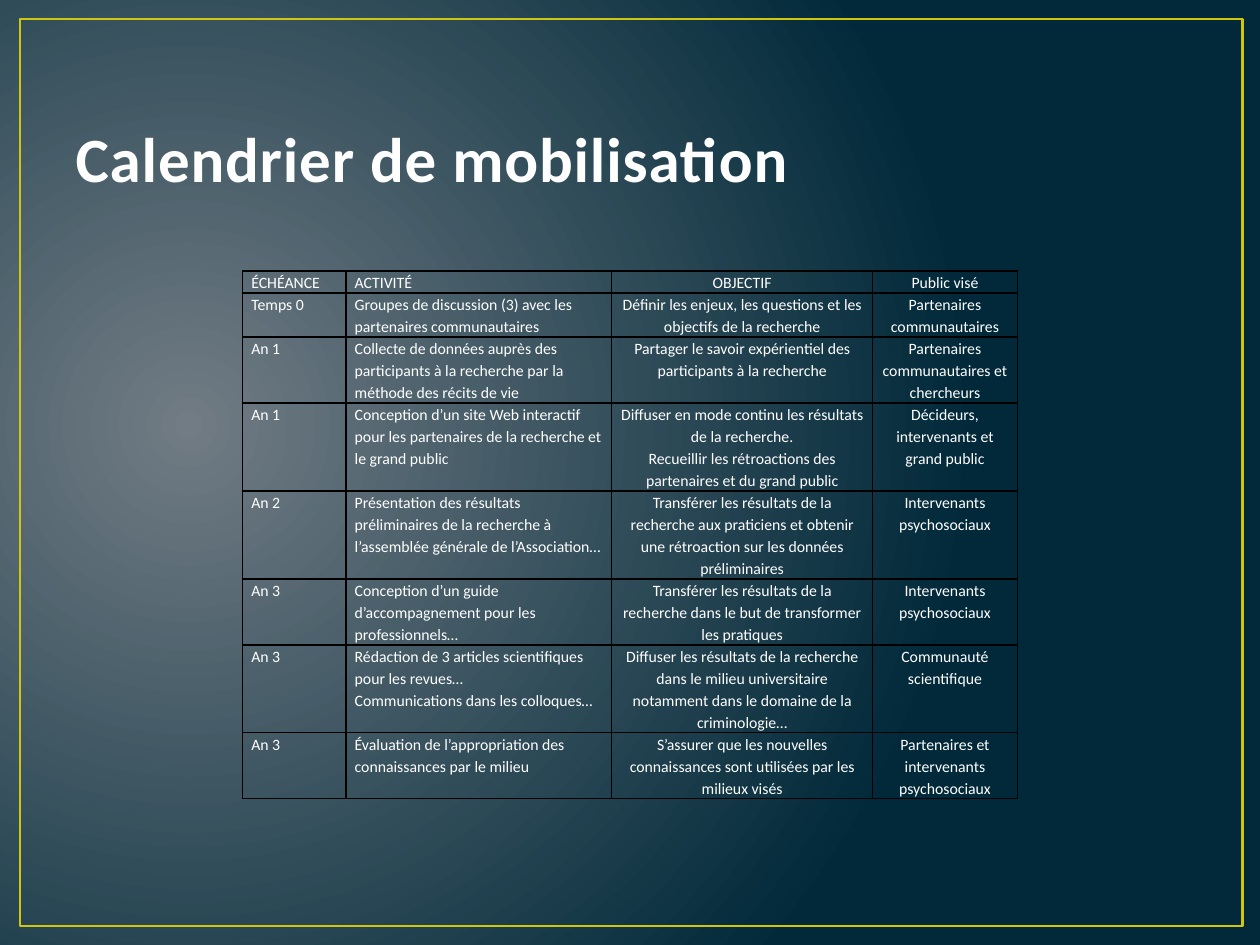
import pptx
import pptx.dml.color
import pptx.enum.text
import pptx.oxml
import pptx.oxml.ns
import pptx.util
from lxml import etree

Pt = pptx.util.Pt
qn = pptx.oxml.ns.qn
ALIGN = pptx.enum.text.PP_ALIGN
FONT = "Calibri"
COLORS = {
    "glow": "717C84",
    "night": "01293A",
    "frame": "CFC60D",
    "title": "FEFEFE",
    "title_outline": "384F55",
    "text": "FFFFFF",
    "border": "000000",
}

COLUMN_WIDTHS = [59.1, 151.9, 149, 82.8]
COLUMN_ALIGNS = [ALIGN.LEFT, ALIGN.LEFT, ALIGN.CENTER, ALIGN.CENTER]
LINE_HEIGHT = 12.57
LINES_PER_ROW = [1, 2, 3, 4, 4, 3, 4, 3]
CALENDAR = [
    ("ÉCHÉANCE", "ACTIVITÉ", "OBJECTIF", "Public visé"),
    ("Temps 0",
     "Groupes de discussion (3) avec les partenaires communautaires",
     "Définir les enjeux, les questions et les objectifs de la recherche",
     "Partenaires communautaires"),
    ("An 1",
     "Collecte de données auprès des participants à la recherche par la "
     "méthode des récits de vie",
     "Partager le savoir expérientiel des participants à la recherche",
     "Partenaires communautaires et chercheurs"),
    ("An 1",
     "Conception d’un site Web interactif pour les partenaires de la "
     "recherche et le grand public",
     "Diffuser en mode continu les résultats de la recherche.\n"
     "Recueillir les rétroactions des partenaires et du grand public",
     "Décideurs, intervenants et grand public"),
    ("An 2",
     "Présentation des résultats préliminaires de la recherche à "
     "l’assemblée générale de l’Association…",
     "Transférer les résultats de la recherche aux praticiens et obtenir "
     "une rétroaction sur les données préliminaires",
     "Intervenants psychosociaux"),
    ("An 3",
     "Conception d’un guide d’accompagnement pour les professionnels…",
     "Transférer les résultats de la recherche dans le but de transformer "
     "les pratiques",
     "Intervenants psychosociaux"),
    ("An 3",
     "Rédaction de 3 articles scientifiques pour les revues…\n"
     "Communications dans les colloques…",
     "Diffuser les résultats de la recherche dans le milieu universitaire "
     "notamment dans le domaine de la criminologie…",
     "Communauté scientifique"),
    ("An 3",
     "Évaluation de l’appropriation des connaissances par le milieu",
     "S’assurer que les nouvelles connaissances sont utilisées par les "
     "milieux visés",
     "Partenaires et intervenants psychosociaux"),
]


def rgb(name):
    return pptx.dml.color.RGBColor.from_string(COLORS[name])


def solid_line(tag, width, color):
    """Line element for a cell border or a text outline."""
    line = etree.Element(qn(tag), w=str(Pt(width)))
    fill = etree.SubElement(line, qn("a:solidFill"))
    etree.SubElement(fill, qn("a:srgbClr"), val=COLORS[color])
    return line


def write_text(frame, text, *, size, color, bold=False, align=ALIGN.LEFT,
               line_spacing=None, tracking=None, outline=None):
    frame.text = text
    for paragraph in frame.paragraphs:
        paragraph.alignment = align
        paragraph.line_spacing = line_spacing
        for run in paragraph.runs:
            run.font.name = FONT
            run.font.size = Pt(size)
            run.font.bold = bold
            run.font.color.rgb = rgb(color)
            properties = run.font._element
            if tracking:
                properties.set("spc", str(round(tracking * 100)))
            if outline:
                properties.insert(0, solid_line("a:ln", *outline))


def paint_background(slide):
    fill = slide.background.fill
    fill.gradient()
    for stop, color, position in zip(fill.gradient_stops, ("glow", "night"), (0, 1)):
        stop.color.rgb = rgb(color)
        stop.position = position
    # Radial glow near the left edge
    gradient = slide._element.find(".//" + qn("a:gradFill"))
    gradient.remove(gradient.find(qn("a:lin")))
    radial = etree.Element(qn("a:path"), {"path": "circle"})
    etree.SubElement(radial, qn("a:fillToRect"),
                     l="15000", t="50000", r="85000", b="60000")
    gradient.find(qn("a:gsLst")).addnext(radial)


def add_frame(slide, left, top, width, height):
    frame = slide.shapes.add_shape(
        pptx.enum.shapes.MSO_SHAPE.RECTANGLE,
        Pt(left), Pt(top), Pt(width), Pt(height))
    frame.shadow.inherit = False
    frame.fill.background()
    frame.line.color.rgb = rgb("frame")
    frame.line.width = Pt(1.5)


def set_title(slide, text, left, top, width, height):
    title = slide.shapes.title
    title.left, title.top = Pt(left), Pt(top)
    title.width, title.height = Pt(width), Pt(height)
    title.text_frame.vertical_anchor = pptx.enum.text.MSO_ANCHOR.BOTTOM
    title.text_frame.auto_size = pptx.enum.text.MSO_AUTO_SIZE.NONE
    title.text_frame.margin_bottom = 0
    write_text(title.text_frame, text, size=36, color="title", bold=True,
               tracking=0.5, outline=(1.05, "title_outline"))


def format_cell(cell):
    cell.margin_left = cell.margin_right = Pt(5)
    cell.margin_top = cell.margin_bottom = 0
    cell.fill.background()
    properties = cell._tc.get_or_add_tcPr()
    for position, side in enumerate(("a:lnL", "a:lnR", "a:lnT", "a:lnB")):
        properties.insert(position, solid_line(side, 1, "border"))


def add_calendar(slide, left, top):
    heights = [lines * LINE_HEIGHT for lines in LINES_PER_ROW]
    table = slide.shapes.add_table(
        len(CALENDAR), len(COLUMN_WIDTHS), Pt(left), Pt(top),
        Pt(sum(COLUMN_WIDTHS)), Pt(sum(heights))).table
    table.first_row = table.horz_banding = False
    for column, width in zip(table.columns, COLUMN_WIDTHS):
        column.width = Pt(width)
    for row, height, entries in zip(table.rows, heights, CALENDAR):
        row.height = Pt(height)
        for cell, entry, align in zip(row.cells, entries, COLUMN_ALIGNS):
            format_cell(cell)
            write_text(cell.text_frame, entry, size=9, color="text",
                       align=align, line_spacing=1.15)


def main():
    presentation = pptx.Presentation()
    presentation.slide_width, presentation.slide_height = Pt(720), Pt(540)
    slide = presentation.slides.add_slide(presentation.slide_layouts[5])

    # Backdrop
    paint_background(slide)
    add_frame(slide, 11.5, 10.8, 698.4, 518.4)

    # Content
    set_title(slide, "Calendrier de mobilisation", 36, 21.6, 648, 90)
    add_calendar(slide, 138.6, 154.8)

    presentation.save("out.pptx")


if __name__ == "__main__":
    main()
